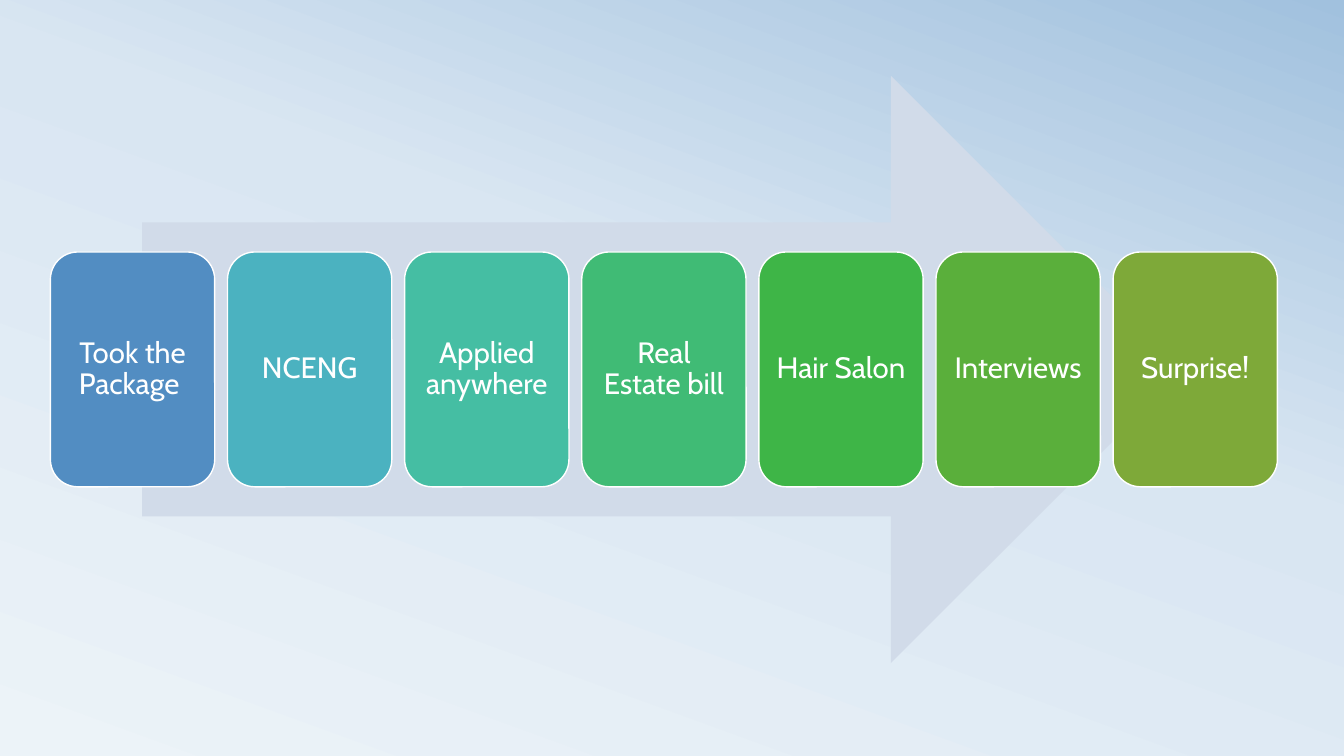
from copy import deepcopy

from pptx import Presentation
from pptx.dml.color import RGBColor
from pptx.enum.shapes import MSO_SHAPE
from pptx.enum.text import MSO_ANCHOR, PP_ALIGN
from pptx.oxml.ns import qn
from pptx.util import Inches, Pt

RIGHT_ARROW = MSO_SHAPE.RIGHT_ARROW
ROUNDED = MSO_SHAPE.ROUNDED_RECTANGLE
MIDDLE = MSO_ANCHOR.MIDDLE
CENTER = PP_ALIGN.CENTER

SKY = [(0, "ECF3F8"), (0.58, "D9E6F2"), (1, "A1C1DE")]
STEPS = [
    ("Took the Package ", "528DC2"),
    ("NCENG", "4BB2C0"),
    ("Applied anywhere", "45BEA3"),
    ("Real Estate bill", "40BB75"),
    ("Hair Salon", "3EB547"),
    ("Interviews", "5AAF3B"),
    ("Surprise!", "7EA939"),
]
FIRST_LEFT, LAST_LEFT = 0.5, 11.04
PITCH = (LAST_LEFT - FIRST_LEFT) / (len(STEPS) - 1)
INSET = Inches(0.09)
FRAME_FORMAT = {
    "word_wrap": True,
    "vertical_anchor": MIDDLE,
    "margin_left": INSET,
    "margin_right": INSET,
    "margin_top": INSET,
    "margin_bottom": INSET,
}
LABEL_FONT = {"name": "Cabin", "size": Pt(21)}


def color(hex_value):
    return RGBColor.from_string(hex_value)


def add_block(kind, left, top, width, height, fill):
    block = slide.shapes.add_shape(
        kind, Inches(left), Inches(top), Inches(width), Inches(height))
    block.shadow.inherit = False
    block.fill.solid()
    block.fill.fore_color.rgb = color(fill)
    return block


prs = Presentation()
prs.slide_width, prs.slide_height = Inches(13.33), Inches(7.5)
slide = prs.slides.add_slide(prs.slide_layouts[6])

# Background: three-stop gradient, darkest at the top right
sky = slide.background.fill
sky.gradient()
sky.gradient_angle = 70
stop_list = next(slide.element.iter(qn("a:gsLst")))
stop_list.insert(1, deepcopy(stop_list[0]))
for stop, (position, shade) in zip(sky.gradient_stops, SKY):
    stop.position = position
    stop.color.rgb = color(shade)

# Arrow behind the steps
arrow = add_block(RIGHT_ARROW, 1.41, 0.75, 10.34, 5.83, "D1DBE9")
arrow.line.fill.background()

# Steps, evenly spaced
for index, (label, fill) in enumerate(STEPS):
    step = add_block(ROUNDED, FIRST_LEFT + index * PITCH, 2.5, 1.63, 2.33, fill)
    step.line.color.rgb = color("FFFFFF")
    step.line.width = Pt(1)
    frame = step.text_frame
    for name, value in FRAME_FORMAT.items():
        setattr(frame, name, value)
    paragraph = frame.paragraphs[0]
    paragraph.alignment = CENTER
    paragraph.line_spacing = 0.9
    run = paragraph.add_run()
    run.text = label
    for name, value in LABEL_FONT.items():
        setattr(run.font, name, value)
    run.font.color.rgb = color("FFFFFF")

prs.save("out.pptx")
